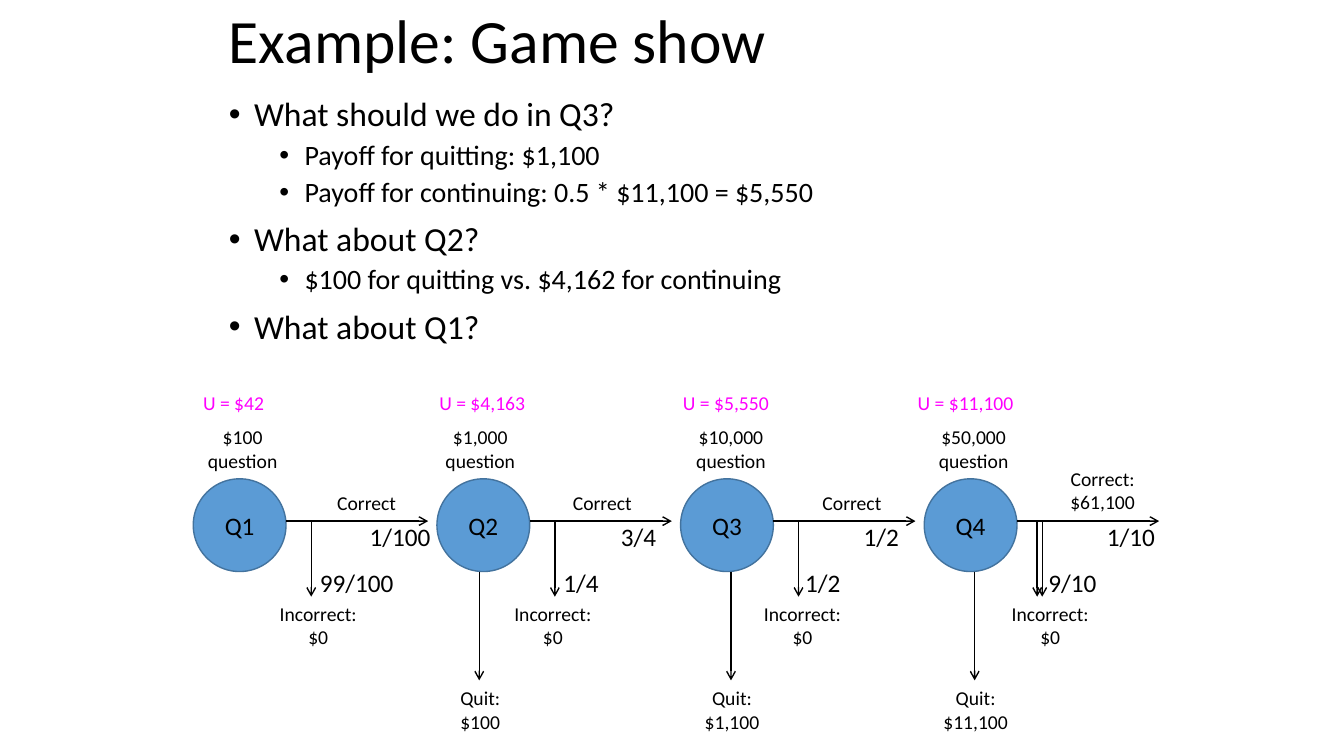
from dataclasses import dataclass

from lxml.etree import SubElement
from pptx import Presentation
from pptx.dml.color import RGBColor
from pptx.enum.shapes import MSO_CONNECTOR, MSO_SHAPE
from pptx.enum.text import MSO_ANCHOR, MSO_AUTO_SIZE, PP_ALIGN
from pptx.oxml.ns import qn
from pptx.util import Inches, Pt

BLACK = RGBColor(0x00, 0x00, 0x00)
BLUE = RGBColor(0x5B, 0x9B, 0xD5)
DARK_BLUE = RGBColor(0x43, 0x73, 0x9E)
MAGENTA = RGBColor(0xFF, 0x00, 0xFF)
FONT = "Calibri"

FIRST_COLUMN = 23 / 12
COLUMN_STEP = 29 / 12
CIRCLE_SIZE = 0.92

UTILITY_ROW = 3.83
PRIZE_ROW = 4.17
CIRCLE_ROW = 4.75
CORRECT_ROW = 4.82
ARROW_ROW = 5.17
CORRECT_ODDS_ROW = 5.12
WRONG_ODDS_ROW = 5.58
INCORRECT_ROW = 5.92
QUIT_ROW = 6.75

BULLETS = [
    (0, "What should we do in Q3?"),
    (1, "Payoff for quitting: $1,100"),
    (1, "Payoff for continuing: 0.5 * $11,100 = $5,550"),
    (0, "What about Q2?"),
    (1, "$100 for quitting vs. $4,162 for continuing"),
    (0, "What about Q1?"),
]


@dataclass
class Question:
    """One stage of the game; the middles are measured from its circle's left."""
    name: str
    prize: str
    utility: str
    correct_odds: str
    wrong_odds: str
    prize_middle: float
    utility_middle: float
    correct_middle: float
    incorrect_middle: float
    odds_middle: float
    wrong_odds_middle: float
    quit_middle: float = 0
    quit_payoff: str = ""
    final_payoff: str = ""


QUESTIONS = [
    Question("Q1", "$100", "U = $42", "1/100", "99/100",
             0.49, 0.4, 1.72, 1.24, 2.05, 1.62),
    Question("Q2", "$1,000", "U = $4,163", "3/4", "1/4",
             0.43, 0.45, 1.64, 1.15, 2.0, 1.43, 0.42, "$100"),
    Question("Q3", "$10,000", "U = $5,550", "1/2", "1/2",
             0.5, 0.45, 1.7, 1.21, 1.99, 1.41, 0.5, "$1,100"),
    Question("Q4", "$50,000", "U = $11,100", "1/10", "9/10",
             0.49, 0.41, 1.77, 1.25, 2.05, 1.47, 0.5, "$11,100", "$61,100"),
]


def style(para, size, color=BLACK):
    para.font.name = FONT
    para.font.size = Pt(size)
    para.font.color.rgb = color


def place(shape, left, top, width, height):
    shape.left, shape.top = Inches(left), Inches(top)
    shape.width, shape.height = Inches(width), Inches(height)


def fill_title(title):
    place(title, 2.17, 0, 9, 0.87)
    frame = title.text_frame
    frame.text = "Example: Game show"
    frame.auto_size = MSO_AUTO_SIZE.NONE
    frame.vertical_anchor = MSO_ANCHOR.MIDDLE
    para = frame.paragraphs[0]
    para.alignment = PP_ALIGN.LEFT
    para.line_spacing = 0.9
    style(para, 44)


def fill_body(body):
    place(body, 2.17, 0.92, 9, 3)
    frame = body.text_frame
    frame.text = "\n".join(text for _, text in BULLETS)
    frame.auto_size = MSO_AUTO_SIZE.NONE
    for index, (para, (level, _)) in enumerate(zip(frame.paragraphs, BULLETS)):
        para.level = level
        properties = para._p.get_or_add_pPr()
        properties.set("marL", str(Inches(0.25 + 0.5 * level)))
        properties.set("indent", str(Inches(-0.25)))
        SubElement(properties, qn("a:buFont"), typeface="Arial")
        SubElement(properties, qn("a:buChar"), char="•")
        para.line_spacing = 0.9
        para.space_before = Pt((10, 5)[level] if index else 0)
        style(para, (24, 20)[level])


def add_label(slide, text, middle, top, size=14, color=BLACK, wrap_width=None):
    """Add centred text; without wrap_width the box is as wide as its longest line."""
    lines = text.split("\n")
    width = wrap_width or 0.25 + max(map(len, lines)) * size * 0.007
    height = 0.57 if wrap_width or len(lines) > 1 else 0.1 + size / 60
    box = slide.shapes.add_textbox(Inches(middle - width / 2), Inches(top),
                                   Inches(width), Inches(height))
    frame = box.text_frame
    frame.word_wrap = wrap_width is not None
    frame.auto_size = MSO_AUTO_SIZE.SHAPE_TO_FIT_TEXT
    frame.text = text
    for para in frame.paragraphs:
        para.alignment = PP_ALIGN.CENTER
        style(para, size, color)


def add_arrow(slide, start_x, start_y, end_x, end_y):
    arrow = slide.shapes.add_connector(
        MSO_CONNECTOR.STRAIGHT, Inches(start_x), Inches(start_y),
        Inches(end_x), Inches(end_y))
    arrow.line.color.rgb = BLACK
    arrow.line.width = Pt(1)
    SubElement(arrow.line._get_or_add_ln(), qn("a:tailEnd"), type="arrow")
    SubElement(arrow._element.spPr, qn("a:effectLst"))


def add_circle(slide, name, left):
    circle = slide.shapes.add_shape(
        MSO_SHAPE.OVAL, Inches(left), Inches(CIRCLE_ROW),
        Inches(CIRCLE_SIZE), Inches(CIRCLE_SIZE))
    circle.shadow.inherit = False
    circle.fill.solid()
    circle.fill.fore_color.rgb = BLUE
    circle.line.color.rgb = DARK_BLUE
    circle.line.width = Pt(1)
    frame = circle.text_frame
    frame.text = name
    frame.vertical_anchor = MSO_ANCHOR.MIDDLE
    frame.paragraphs[0].alignment = PP_ALIGN.CENTER
    style(frame.paragraphs[0], 18)


def add_question(slide, question, left):
    add_circle(slide, question.name, left)
    add_arrow(slide, left + CIRCLE_SIZE, ARROW_ROW, left + 2.33, ARROW_ROW)
    add_arrow(slide, left + 1.17, ARROW_ROW, left + 1.17, INCORRECT_ROW)
    add_label(slide, question.utility, left + question.utility_middle,
              UTILITY_ROW, color=MAGENTA)
    add_label(slide, f"{question.prize} question", left + question.prize_middle,
              PRIZE_ROW, wrap_width=1.18)
    if question.final_payoff:
        add_label(slide, f"Correct:\n{question.final_payoff}",
                  left + question.correct_middle, CORRECT_ROW - 0.24)
        add_arrow(slide, left + 1.12, ARROW_ROW, left + 1.12, INCORRECT_ROW)
    else:
        add_label(slide, "Correct", left + question.correct_middle, CORRECT_ROW)
    add_label(slide, "Incorrect:\n$0", left + question.incorrect_middle, INCORRECT_ROW)
    add_label(slide, question.correct_odds, left + question.odds_middle,
              CORRECT_ODDS_ROW, 18)
    add_label(slide, question.wrong_odds, left + question.wrong_odds_middle,
              WRONG_ODDS_ROW, 18)
    if question.quit_payoff:
        quit_x = left + question.quit_middle
        add_arrow(slide, quit_x, CIRCLE_ROW + CIRCLE_SIZE, quit_x, QUIT_ROW)
        add_label(slide, f"Quit:\n{question.quit_payoff}", quit_x + 0.01, QUIT_ROW + 0.01)


def main():
    deck = Presentation()
    deck.slide_width, deck.slide_height = Inches(13.33), Inches(7.5)
    slide = deck.slides.add_slide(deck.slide_layouts[1])
    fill_title(slide.shapes.title)
    fill_body(slide.placeholders[1])
    for column, question in enumerate(QUESTIONS):
        add_question(slide, question, FIRST_COLUMN + column * COLUMN_STEP)
    deck.save("out.pptx")


if __name__ == "__main__":
    main()
